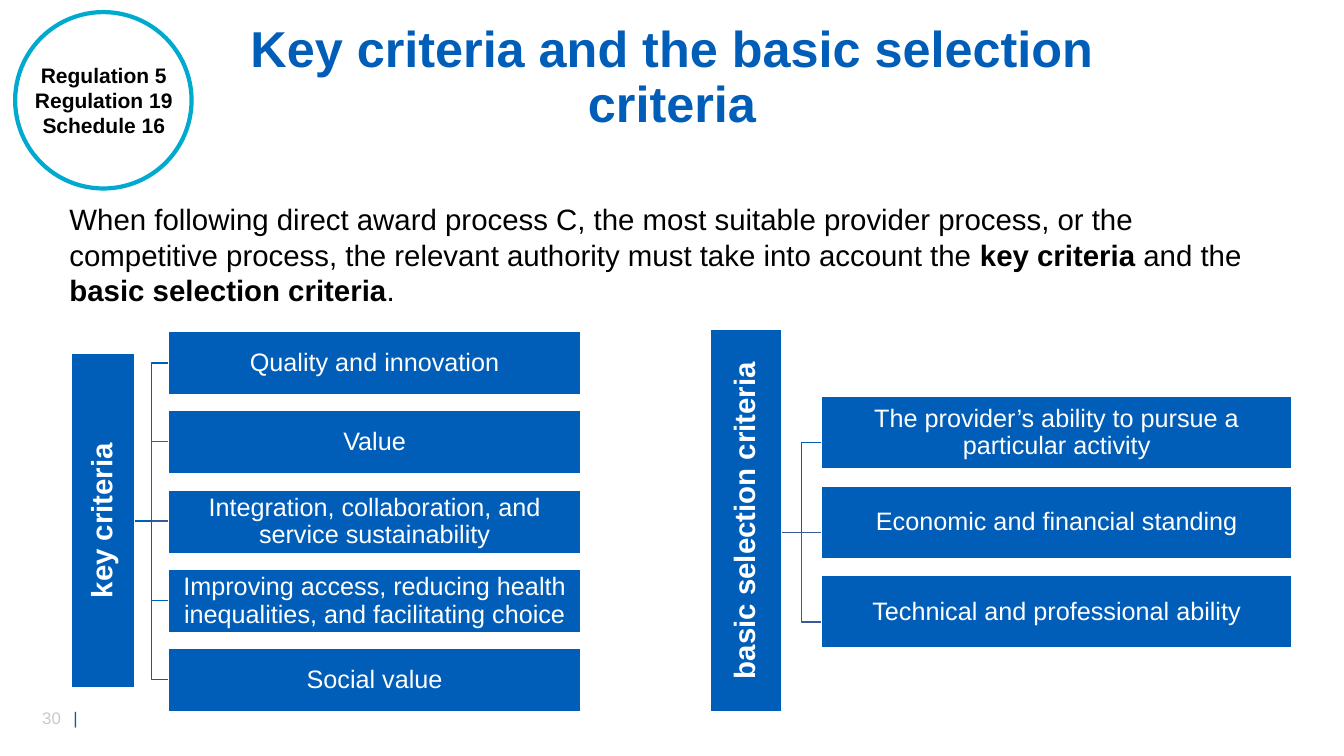
from lxml import etree
from pptx import Presentation
from pptx import util as u
from pptx.dml.color import RGBColor
from pptx.enum import shapes, text
from pptx.oxml import ns

PX = 9144
FONT = "Arial"
BLUE, SLATE, TEAL = "005EB8", "365B9D", "00A9CE"
WHITE, BLACK, GREY = "FFFFFF", "000000", "C9C9C9"
CENTER = text.PP_ALIGN.CENTER
KEY_CRITERIA = [
    ("Quality and innovation", BLUE),
    ("Value", SLATE),
    ("Integration, collaboration, and service sustainability", SLATE),
    ("Improving access, reducing health inequalities, and facilitating choice", BLUE),
    ("Social value", BLUE),
]
BASIC_CRITERIA = [
    ("The provider’s ability to pursue a particular activity", BLUE),
    ("Economic and financial standing", SLATE),
    ("Technical and professional ability", SLATE),
]


def px(*lengths):
    return [length * PX for length in lengths]


def color(value):
    return RGBColor.from_string(value)


def set_font(para, size, shade, bold=False):
    para.font.name = FONT
    para.font.size = u.Pt(size)
    para.font.bold = bold
    para.font.color.rgb = color(shade)


def add_text_box(page, box, wrap=True):
    frame = page.shapes.add_textbox(*px(*box)).text_frame
    frame.word_wrap = wrap
    return frame


def add_block(page, box, label, size, bold=False, rotation=0):
    block = page.shapes.add_shape(shapes.MSO_SHAPE.RECTANGLE, *px(*box))
    block.shadow.inherit = False
    block.rotation = rotation
    block.fill.solid()
    block.fill.fore_color.rgb = color(BLUE)
    block.line.color.rgb = color(WHITE)
    block.line.width = u.Pt(1)
    frame = block.text_frame
    frame.word_wrap = True
    frame.vertical_anchor = text.MSO_ANCHOR.MIDDLE
    frame.margin_left = frame.margin_right = PX
    frame.margin_top = frame.margin_bottom = PX
    para = frame.paragraphs[0]
    para.text = label
    para.alignment = CENTER
    para.line_spacing = 0.9
    set_font(para, size, WHITE, bold)


def add_branch(page, start, end, shade):
    (left, top), (right, bottom) = start, end
    if top == bottom:
        branch = page.shapes.add_connector(
            shapes.MSO_CONNECTOR.STRAIGHT, *px(left, top, right, bottom))
        etree.SubElement(branch._element.spPr, ns.qn("a:effectLst"))
    else:
        middle = (left + right) // 2
        builder = page.shapes.build_freeform(left, top, scale=PX)
        builder.add_line_segments(
            [(middle, top), (middle, bottom), (right, bottom)], close=False)
        branch = builder.convert_to_shape()
        branch.shadow.inherit = False
        branch.fill.background()
    branch.line.color.rgb = color(shade)
    branch.line.width = u.Pt(1)


def add_tree(page, box, heading, trunk, items, item_box, joint_drop=0):
    left, top, width, height = box
    trunk_width, trunk_top, trunk_height = trunk
    item_left, item_top, item_height, last_top = item_box
    tops = [top + item_top + round(row * (last_top - item_top) / (len(items) - 1))
            for row in range(len(items))]
    middle = tops[len(tops) // 2] + item_height // 2 + joint_drop
    for (label, shade), row_top in zip(items, tops):
        joint = row_top + item_height // 2 + joint_drop
        add_branch(page, (left + trunk_width, middle), (left + item_left, joint), shade)
    shift = (trunk_height - trunk_width) // 2
    add_block(page, (left - shift, top + trunk_top + shift, trunk_height, trunk_width),
              heading, 21, True, 270)
    for (label, shade), row_top in zip(items, tops):
        add_block(page, (left + item_left, row_top, width - item_left, item_height),
                  label, 18)


def add_title(page, box):
    frame = add_text_box(page, box)
    frame.vertical_anchor = text.MSO_ANCHOR.MIDDLE
    para = frame.paragraphs[0]
    para.text = "Key criteria and the basic selection criteria"
    para.alignment = CENTER
    para.line_spacing = 0.9
    set_font(para, 36, BLUE, True)


def add_badge(page, box):
    left, top, width, height = box
    circle = page.shapes.add_shape(shapes.MSO_SHAPE.OVAL, *px(*box))
    circle.shadow.inherit = False
    circle.fill.solid()
    circle.fill.fore_color.rgb = color(WHITE)
    circle.line.color.rgb = color(TEAL)
    circle.line.width = u.Pt(3)
    frame = add_text_box(page, (left + 6, top + 45, width - 11, 86), wrap=False)
    para = frame.paragraphs[0]
    para.text = "Regulation 5\nRegulation 19\nSchedule 16"
    para.alignment = CENTER
    set_font(para, 15, BLACK, True)


def add_intro(page, box):
    para = add_text_box(page, box).paragraphs[0]
    set_font(para, 21, BLACK)
    for words, bold in [
        ("When following direct award process C, the most suitable provider process, "
         "or the competitive process, the relevant authority must take into account the ",
         False),
        ("key criteria", True),
        (" and the ", False),
        ("basic selection criteria", True),
        (".", False),
    ]:
        span = para.add_run()
        span.text = words
        span.font.bold = bold


def add_page_number(page, box):
    para = add_text_box(page, box).paragraphs[0]
    tabs = etree.SubElement(para._p.get_or_add_pPr(), ns.qn("a:tabLst"))
    etree.SubElement(tabs, ns.qn("a:tab"), pos=str(31 * PX), algn="l")
    set_font(para, 12, GREY)
    for words, shade in [("30\t", GREY), ("|", BLUE)]:
        span = para.add_run()
        span.text = words
        span.font.color.rgb = color(shade)


def add_criteria_page(deck):
    page = deck.slides.add_slide(deck.slide_layouts[6])
    add_page_number(page, (32, 697, 71, 30))
    add_title(page, (222, 27, 889, 102))
    add_badge(page, (15, 12, 175, 175))
    add_intro(page, (59, 195, 1215, 116))
    add_tree(page, (70, 329, 506, 377), "key criteria", (63, 22, 332),
             KEY_CRITERIA, (97, 0, 63, 314))
    add_tree(page, (704, 327, 577, 379), "basic selection criteria", (71, 0, 379),
             BASIC_CRITERIA, (111, 66, 72, 244), joint_drop=10)


def main():
    deck = Presentation()
    deck.slide_width, deck.slide_height = px(1333, 750)
    add_criteria_page(deck)
    deck.save("out.pptx")


if __name__ == "__main__":
    main()
